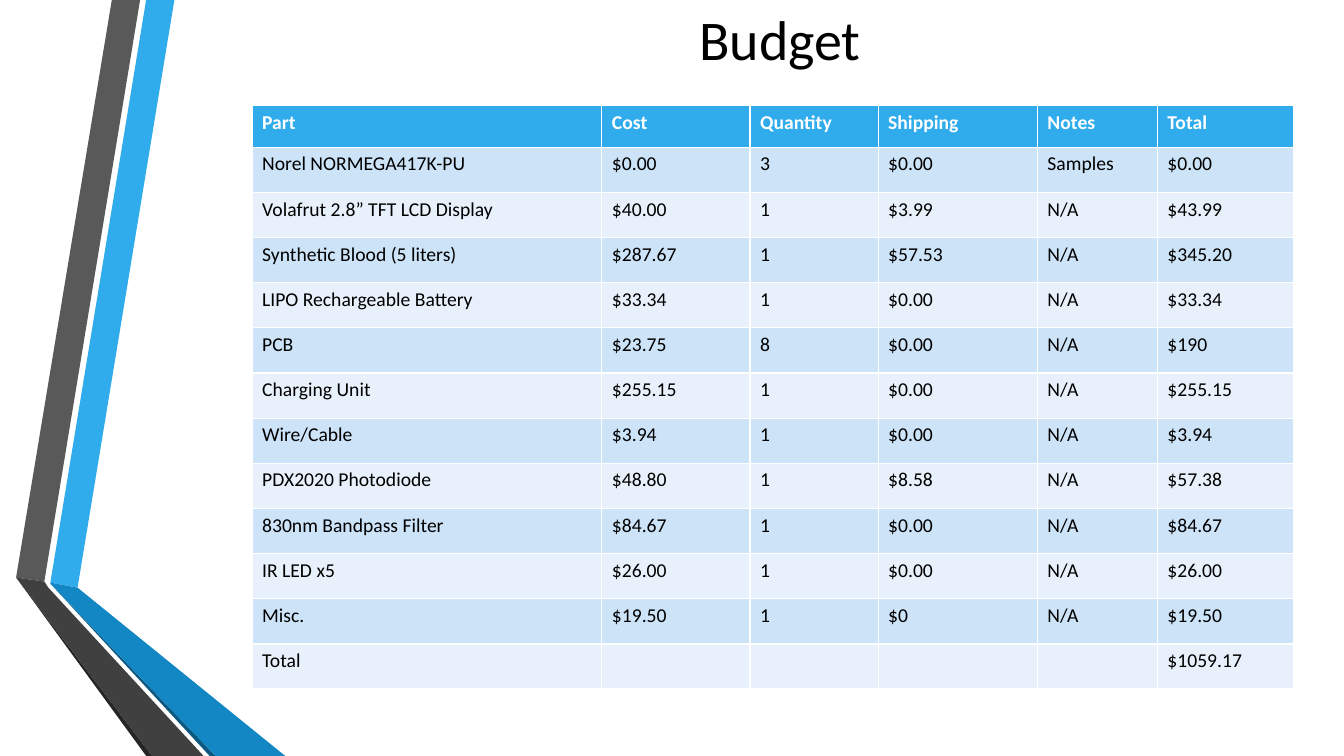
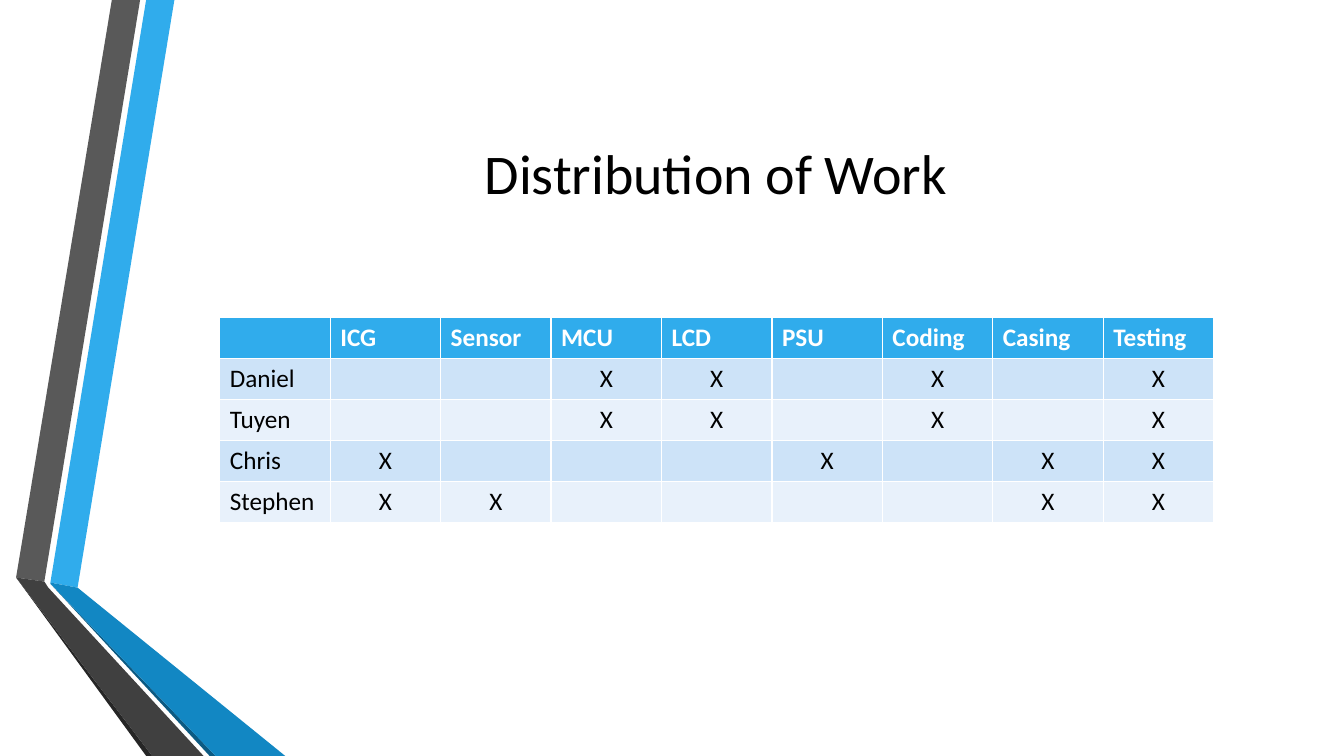
from pptx import Presentation
from pptx.dml.color import RGBColor
from pptx.enum.text import MSO_ANCHOR as Anchor, PP_ALIGN as Align
from pptx.util import Emu, Pt

# Lengths are in px, 100 to the inch
PX = 9144
SLIDE_WIDTH, SLIDE_HEIGHT = 1333, 750
FONT = "Calibri"
TITLE_ONLY = 5

# Colours
BLACK = RGBColor(0x00, 0x00, 0x00)
WHITE = RGBColor(0xFF, 0xFF, 0xFF)
BLUE = RGBColor(0x30, 0xAC, 0xEC)
MID_BLUE = RGBColor(0x12, 0x87, 0xC3)
DEEP_BLUE = RGBColor(0x0C, 0x5A, 0x82)
GREY = RGBColor(0x59, 0x59, 0x59)
DARK_GREY = RGBColor(0x40, 0x40, 0x40)
DEEP_GREY = RGBColor(0x26, 0x26, 0x26)
ROW_TINTS = (RGBColor(0xCD, 0xE3, 0xF8), RGBColor(0xE8, 0xF1, 0xFB))

# Folded ribbons along the left edge, from back to front
RIBBONS = [
    (BLUE, [(50, 578), (77, 583), (173, 0), (145, 0)]),
    (GREY, [(139, 0), (111, 0), (16, 573), (44, 577)]),
    (DEEP_GREY, [(16, 573), (145, 750), (151, 750)]),
    (DEEP_BLUE, [(50, 579), (208, 750), (214, 750)]),
    (MID_BLUE, [(50, 578), (50, 579), (214, 750), (283, 750), (77, 583)]),
    (DARK_GREY, [(202, 750), (48, 583), (44, 577), (16, 573), (151, 750)]),
]

# Table contents
BUDGET = [
    ("Part", "Cost", "Quantity", "Shipping", "Notes", "Total"),
    ("Norel NORMEGA417K-PU", "$0.00", "3", "$0.00", "Samples", "$0.00"),
    ("Volafrut 2.8” TFT LCD Display", "$40.00", "1", "$3.99", "N/A", "$43.99"),
    ("Synthetic Blood (5 liters)", "$287.67", "1", "$57.53", "N/A", "$345.20"),
    ("LIPO Rechargeable Battery", "$33.34", "1", "$0.00", "N/A", "$33.34"),
    ("PCB", "$23.75", "8", "$0.00", "N/A", "$190"),
    ("Charging Unit", "$255.15", "1", "$0.00", "N/A", "$255.15"),
    ("Wire/Cable", "$3.94", "1", "$0.00", "N/A", "$3.94"),
    ("PDX2020 Photodiode", "$48.80", "1", "$8.58", "N/A", "$57.38"),
    ("830nm Bandpass Filter", "$84.67", "1", "$0.00", "N/A", "$84.67"),
    ("IR LED x5", "$26.00", "1", "$0.00", "N/A", "$26.00"),
    ("Misc.", "$19.50", "1", "$0", "N/A", "$19.50"),
    ("Total", "", "", "", "", "$1059.17"),
]
BUDGET_WIDTHS = [347, 147, 127, 158, 119, 135]

TASKS = ["ICG", "Sensor", "MCU", "LCD", "PSU", "Coding", "Casing", "Testing"]
ASSIGNMENTS = {
    "Daniel": {"MCU", "LCD", "Coding", "Testing"},
    "Tuyen": {"MCU", "LCD", "Coding", "Testing"},
    "Chris": {"ICG", "PSU", "Casing", "Testing"},
    "Stephen": {"ICG", "Sensor", "Casing", "Testing"},
}


def px(length):
    return Emu(round(length * PX))


def set_font(paragraph, size, color, bold=False):
    font = paragraph.font
    font.name, font.size, font.bold = FONT, Pt(size), bold
    font.color.rgb = color


def add_ribbon(slide, color, points):
    builder = slide.shapes.build_freeform(*points[0], scale=PX)
    builder.add_line_segments(points[1:], close=True)
    shape = builder.convert_to_shape()
    shape.shadow.inherit = False
    shape.fill.solid()
    shape.fill.fore_color.rgb = color
    shape.line.fill.background()


def add_slide(presentation, title_text, left, top, width, height):
    """Add a slide with the shared ribbons and a centred title."""
    slide = presentation.slides.add_slide(presentation.slide_layouts[TITLE_ONLY])
    for color, points in RIBBONS:
        add_ribbon(slide, color, points)
    title = slide.shapes.title
    title.left, title.top = px(left), px(top)
    title.width, title.height = px(width), px(height)
    frame = title.text_frame
    frame.text = title_text
    frame.vertical_anchor = Anchor.MIDDLE
    paragraph = frame.paragraphs[0]
    paragraph.alignment = Align.CENTER
    set_font(paragraph, 40, BLACK)
    return slide


def add_banded_table(slide, rows, left, top, widths, height, size,
                     header_height=41, center_body=False):
    """Add a table with a blue header; body rows share the remaining height."""
    table = slide.shapes.add_table(len(rows), len(widths), px(left), px(top),
                                   px(sum(widths)), px(height)).table
    for column, width in zip(table.columns, widths):
        column.width = px(width)
    body_height = (height - header_height) / (len(rows) - 1)
    for row_index, texts in enumerate(rows):
        is_header = row_index == 0
        table.rows[row_index].height = px(header_height if is_header else body_height)
        for column_index, text in enumerate(texts):
            cell = table.cell(row_index, column_index)
            cell.fill.solid()
            cell.fill.fore_color.rgb = BLUE if is_header else ROW_TINTS[(row_index - 1) % 2]
            cell.text = text
            paragraph = cell.text_frame.paragraphs[0]
            set_font(paragraph, size, WHITE if is_header else BLACK, is_header)
            if center_body and not is_header and column_index > 0:
                paragraph.alignment = Align.CENTER


def add_budget_slide(presentation):
    slide = add_slide(presentation, "Budget", 585, -58, 377, 192)
    add_banded_table(slide, BUDGET, 250, 105, BUDGET_WIDTHS, 579, 14)


def add_work_slide(presentation):
    slide = add_slide(presentation, "Distribution of Work", 162, 75, 1096, 192)
    rows = [["", *TASKS]]
    for person, tasks in ASSIGNMENTS.items():
        rows.append([person, *("X" if task in tasks else "" for task in TASKS)])
    column_count = len(TASKS) + 1
    widths = [986 / column_count] * column_count
    add_banded_table(slide, rows, 218, 315, widths, 203, 18, center_body=True)


def main():
    presentation = Presentation()
    presentation.slide_width = px(SLIDE_WIDTH)
    presentation.slide_height = px(SLIDE_HEIGHT)
    add_budget_slide(presentation)
    add_work_slide(presentation)
    presentation.save("out.pptx")


if __name__ == "__main__":
    main()
